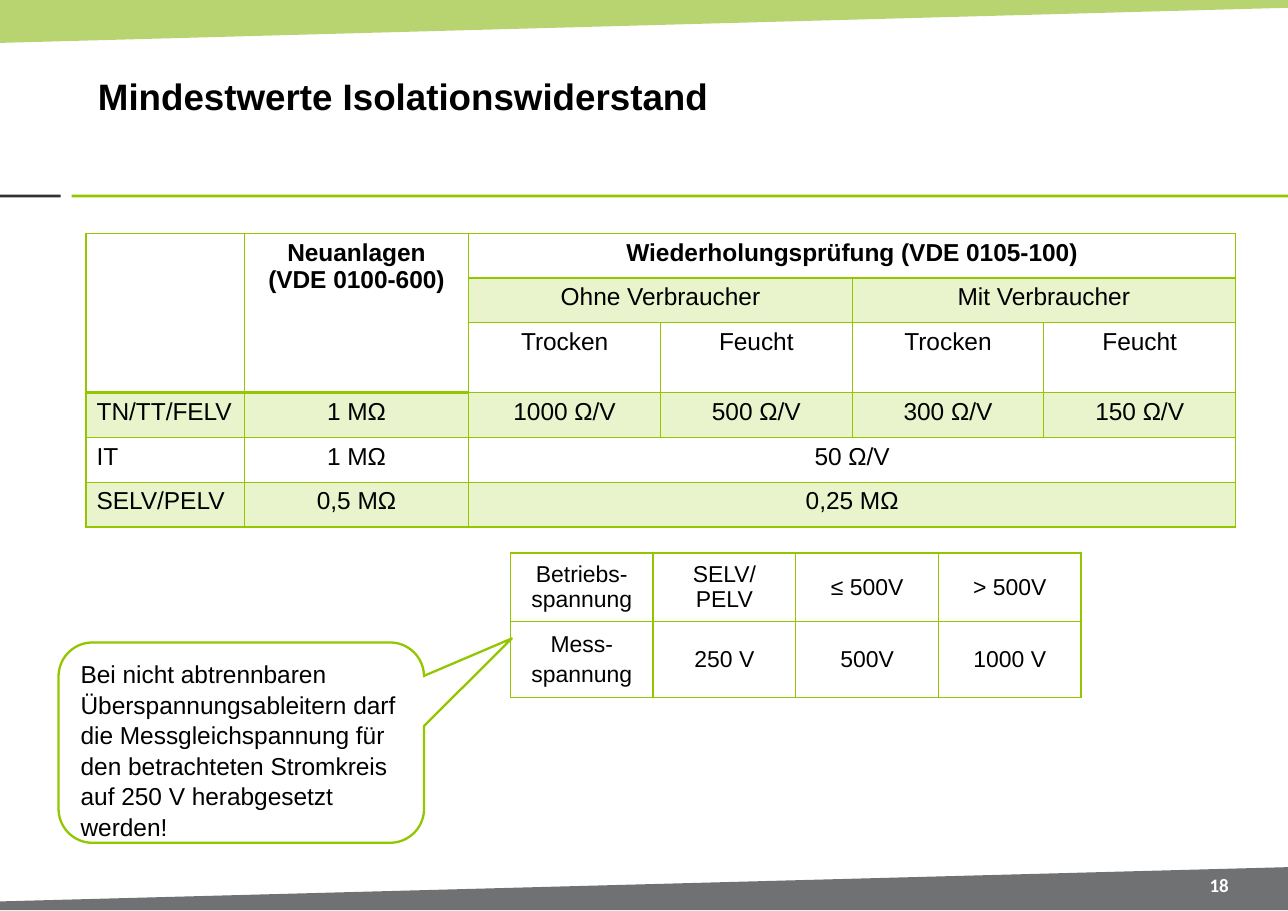
from lxml.etree import SubElement
from pptx import Presentation
from pptx.dml.color import RGBColor
from pptx.enum.shapes import MSO_SHAPE
from pptx.enum.text import MSO_ANCHOR, PP_ALIGN
from pptx.oxml.ns import qn
from pptx.util import Cm, Pt

GREEN, WHITE, BLACK = "94C600", "FFFFFF", "000000"

BANDS = [
    ("95C02A", 67, [(0, 0), (29.7, 0), (29.7, 0.18), (0, 0.99)]),
    ("707173", 100, [(29.7, 20.98), (0, 20.98), (0, 20.78), (29.7, 19.99)]),
]
RULES = [("313130", 0, 1.4), (GREEN, 1.65, 28.05)]

TITLE = "Mindestwerte Isolationswiderstand"
PAGE_NUMBER = "18"
CALLOUT = (
    "Bei nicht abtrennbaren Überspannungsableitern darf die Messgleichspannung "
    "für den betrachteten Stromkreis auf 250 V herabgesetzt werden!"
)

VOLTAGES = [
    ["Betriebs-spannung", "SELV/ PELV", "≤ 500V", "> 500V"],
    ["Mess-\nspannung", "250 V", "500V", "1000 V"],
]
RESISTANCES = [
    ["", "Neuanlagen (VDE 0100-600)", "Wiederholungsprüfung (VDE 0105-100)", "", "", ""],
    ["", "", "Ohne Verbraucher", "", "Mit Verbraucher", ""],
    ["", "", "Trocken", "Feucht", "Trocken", "Feucht"],
    ["TN/TT/FELV", "1 MΩ", "1000 Ω/V", "500 Ω/V", "300 Ω/V", "150 Ω/V"],
    ["IT", "1 MΩ", "50 Ω/V", "", "", ""],
    ["SELV/PELV", "0,5 MΩ", "0,25 MΩ", "", "", ""],
]
MERGES = [
    (0, 0, 2, 0), (0, 1, 2, 1), (0, 2, 0, 5), (1, 2, 1, 3),
    (1, 4, 1, 5), (4, 2, 4, 5), (5, 2, 5, 5),
]
THICK_BELOW = {(0, column) for column in range(2, 6)} | {(2, 0), (2, 1)}

WIDE_INSETS = {"margin_left": Cm(0.28), "margin_right": Cm(0.28),
               "margin_top": Cm(0.15), "margin_bottom": Cm(0.15)}
FLAT_INSETS = {**WIDE_INSETS, "margin_top": Cm(0.13), "margin_bottom": Cm(0.13)}
CELL_INSETS = {**FLAT_INSETS, "margin_left": Cm(0.25), "margin_right": Cm(0.25)}


def apply(target, values):
    for name, value in values.items():
        setattr(target, name, value)


def paint(fill, element, color, opacity=100):
    fill.solid()
    fill.fore_color.rgb = RGBColor.from_string(color)
    if opacity < 100:
        color_element = next(element.iter(qn("a:srgbClr")))
        SubElement(color_element, qn("a:alpha"), val=str(opacity * 1000))


def write(frame, text, size, color=BLACK, bold=False, font="Arial",
          align=PP_ALIGN.LEFT, space=0, line_spacing=None):
    for index, line in enumerate(text.split("\n")):
        paragraph = frame.add_paragraph() if index else frame.paragraphs[0]
        paragraph.text = line
        apply(paragraph, {"alignment": align, "line_spacing": line_spacing,
                          "space_before": Pt(space if index else 0)})
        apply(paragraph.font, {"size": Pt(size), "bold": bold, "name": font})
        paragraph.font.color.rgb = RGBColor.from_string(color)


def add_text(slide, box, text, size, **style):
    frame = slide.shapes.add_textbox(*map(Cm, box)).text_frame
    apply(frame, {"word_wrap": True, "vertical_anchor": MSO_ANCHOR.MIDDLE, **WIDE_INSETS})
    write(frame, text, size, **style)


def add_plain_shape(slide, preset, box, color):
    shape = slide.shapes.add_shape(preset, *map(Cm, box))
    shape.shadow.inherit = False
    shape.line.fill.background()
    paint(shape.fill, shape.element, color)
    return shape


def add_band(slide, color, opacity, points):
    corners = [(Cm(x), Cm(y)) for x, y in points]
    builder = slide.shapes.build_freeform(*corners[0])
    builder.add_line_segments(corners[1:], close=True)
    shape = builder.convert_to_shape()
    shape.shadow.inherit = False
    shape.line.fill.background()
    paint(shape.fill, shape.element, color, opacity)


def add_borders(cell, widths):
    properties = cell._tc.get_or_add_tcPr()
    for index, (side, width) in enumerate(widths.items()):
        line = SubElement(properties, qn(f"a:ln{side}"), w=str(Pt(width)))
        fill = SubElement(line, qn("a:solidFill"))
        SubElement(fill, qn("a:srgbClr"), val=GREEN)
        properties.insert(index, line)


def add_grid(slide, left, top, column_widths, row_heights, contents, cell_format,
             style, merges=(), thick=(), tinted=False, bold_rows=0, left_from=None):
    frame = slide.shapes.add_table(
        len(row_heights), len(column_widths), Cm(left), Cm(top),
        Cm(sum(column_widths)), Cm(sum(row_heights)))
    table = frame.table
    apply(table, {"first_row": False, "horz_banding": False})
    for column, width in zip(table.columns, column_widths):
        column.width = Cm(width)
    for row, height in zip(table.rows, row_heights):
        row.height = Cm(height)
    for r, texts in enumerate(contents):
        for c, text in enumerate(texts):
            cell = table.cell(r, c)
            apply(cell, cell_format)
            if tinted and r % 2 and text:
                paint(cell.fill, cell._tc, GREEN, 20)
            else:
                cell.fill.background()
            add_borders(cell, {"L": 1, "R": 1, "T": 2 if (r - 1, c) in thick else 1,
                               "B": 2 if (r, c) in thick else 1})
            if text:
                label = left_from is not None and r >= left_from and c == 0
                write(cell.text_frame, text, bold=r < bold_rows,
                      align=PP_ALIGN.LEFT if label else PP_ALIGN.CENTER, **style)
    for r1, c1, r2, c2 in merges:
        table.cell(r1, c1).merge(table.cell(r2, c2))


def add_callout(slide):
    shape = add_plain_shape(slide, MSO_SHAPE.ROUNDED_RECTANGULAR_CALLOUT,
                            (1.35, 14.81, 8.43, 4.62), WHITE)
    for index, value in enumerate((0.74, -0.52, 0.17)):
        shape.adjustments[index] = value
    shape.line.width = Pt(1.5)
    shape.line.color.rgb = RGBColor.from_string(GREEN)
    apply(shape.text_frame, {"word_wrap": True, "vertical_anchor": MSO_ANCHOR.TOP,
                             **FLAT_INSETS})
    write(shape.text_frame, CALLOUT, 16, line_spacing=1.04)


def main():
    presentation = Presentation()
    apply(presentation, {"slide_width": Cm(29.7), "slide_height": Cm(21)})
    slide = presentation.slides.add_slide(presentation.slide_layouts[6])
    for band in BANDS:
        add_band(slide, *band)
    for color, left, width in RULES:
        add_plain_shape(slide, MSO_SHAPE.RECTANGLE, (left, 4.49, width, 0.06), color)
    add_text(slide, (1.98, 0.71, 23.32, 3.02), TITLE, 24, bold=True)
    add_text(slide, (27.25, 20.04, 1.73, 0.74), PAGE_NUMBER, 12.4, color=WHITE,
             bold=True, font="Calibri", align=PP_ALIGN.CENTER)
    add_grid(slide, 11.77, 12.75, [3.29] * 4, [1.47, 1.76], VOLTAGES,
             {"vertical_anchor": MSO_ANCHOR.MIDDLE, **WIDE_INSETS},
             {"size": 15, "space": 3})
    add_callout(slide)
    add_grid(slide, 1.98, 5.38, [3.65, 5.18] + [4.42] * 4, [1.03] * 6, RESISTANCES,
             {"vertical_anchor": MSO_ANCHOR.TOP, **CELL_INSETS}, {"size": 16},
             merges=MERGES, thick=THICK_BELOW, tinted=True, bold_rows=1, left_from=3)
    presentation.save("out.pptx")


if __name__ == "__main__":
    main()
